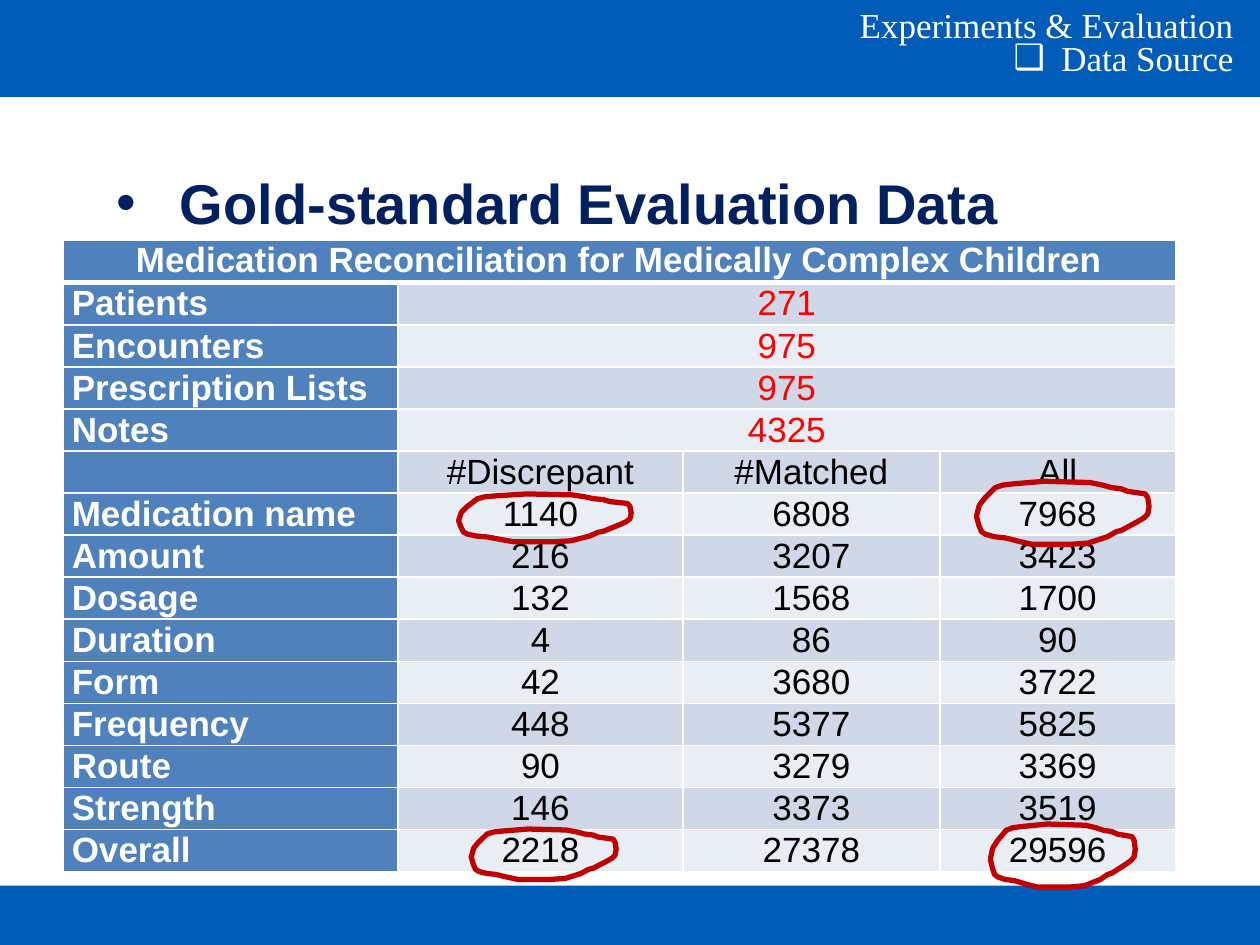
"""Build the slide on the gold-standard evaluation data."""
from lxml.etree import SubElement
from pptx import Presentation
from pptx.dml.color import RGBColor
from pptx.enum.shapes import MSO_SHAPE
from pptx.enum.text import MSO_ANCHOR, PP_ALIGN
from pptx.oxml.ns import qn
from pptx.util import Inches, Pt

BLUE = RGBColor(0x00, 0x5C, 0xB8)
NAVY = RGBColor(0x00, 0x20, 0x60)
STEEL = RGBColor(0x4F, 0x81, 0xBD)
BANDS = RGBColor(0xE9, 0xED, 0xF4), RGBColor(0xD0, 0xD8, 0xE8)
WHITE = RGBColor(0xFF, 0xFF, 0xFF)
BLACK = RGBColor(0x00, 0x00, 0x00)
RED = RGBColor(0xFF, 0x00, 0x00)
CRIMSON = RGBColor(0xC0, 0x00, 0x00)

TITLE = {"name": "Arial", "size": Pt(32), "bold": True}
HEAD = {"name": "Times New Roman", "size": Pt(20)}
LABEL = {"name": "Arial", "size": Pt(20), "bold": True}
VALUE = {"name": "Arial", "size": Pt(20), "bold": False}
INSETS = {"margin_left": Inches(0.07), "margin_right": Inches(0.07),
          "margin_top": 0, "margin_bottom": 0}

WIDTHS = 2.66, 2.26, 2.04, 1.87
ROWS = [
    ("Medication Reconciliation for Medically Complex Children",),
    ("Patients", "271"),
    ("Encounters", "975"),
    ("Prescription Lists", "975"),
    ("Notes", "4325"),
    ("", "#Discrepant", "#Matched", "All"),
    ("Medication name", "1140", "6808", "7968"),
    ("Amount", "216", "3207", "3423"),
    ("Dosage", "132", "1568", "1700"),
    ("Duration", "4", "86", "90"),
    ("Form", "42", "3680", "3722"),
    ("Frequency", "448", "5377", "5825"),
    ("Route", "90", "3279", "3369"),
    ("Strength", "146", "3373", "3519"),
    ("Overall", "2218", "27378", "29596"),
]

LOOP_SIZE = 137, 50
LOOP = [
    (11, 9), (15, 5), (21, 3), (30, 2), (54, 0), (90, 1), (100, 3), (107, 5),
    (115, 6), (120, 8), (134, 10), (136, 13), (137, 20), (136, 26), (133, 29),
    (128, 32), (115, 39), (111, 40), (104, 44), (89, 49), (75, 50), (44, 50),
    (35, 48), (23, 45), (14, 44), (7, 42), (4, 40), (2, 35), (0, 28), (2, 20),
    (3, 18), (7, 13),
]
MARKS = [(7.75, 3.82, 1.37, 0.5), (3.64, 3.92, 1.37, 0.38),
         (7.86, 6.54, 1.15, 0.5), (3.74, 6.58, 1.15, 0.4)]


def assign(item, values):
    """Set each named attribute of an item."""
    for name, value in values.items():
        setattr(item, name, value)


class Painter:
    """Hold the style and the slide being drawn."""

    def __init__(self, slide):
        """Keep the slide."""
        self.slide = slide
        self.shapes = slide.shapes

    def label(self, para, text, style, color, align=PP_ALIGN.LEFT):
        """Add one styled run to a paragraph."""
        para.alignment = align
        run = para.add_run()
        run.text = text
        assign(run.font, style)
        run.font.color.rgb = color

    def bullet(self, para, mark, indent):
        """Give a paragraph a hanging bullet."""
        props = para._p.get_or_add_pPr()
        props.set("marL", str(Inches(indent)))
        props.set("indent", str(-Inches(indent)))
        SubElement(props, qn("a:buFont"), typeface="Arial")
        SubElement(props, qn("a:buChar"), char=mark)

    def bar(self, top, height):
        """Draw a band across the slide."""
        bar = self.shapes.add_shape(
            MSO_SHAPE.RECTANGLE, 0, Inches(top), Inches(10), Inches(height))
        bar.shadow.inherit = False
        bar.fill.solid()
        bar.fill.fore_color.rgb = BLUE
        bar.line.fill.background()

    def text(self, box, lines, style, color, align, spacing, anchor):
        """Add a text box of (text, bullet, indent) lines."""
        frame = self.shapes.add_textbox(*map(Inches, box)).text_frame
        frame.word_wrap = True
        frame.vertical_anchor = anchor
        for index, (text, mark, indent) in enumerate(lines):
            para = frame.add_paragraph() if index else frame.paragraphs[0]
            if mark:
                self.bullet(para, mark, indent)
            para.line_spacing = spacing
            self.label(para, text, style, color, align)

    def border(self, cell, bottom):
        """Edge a cell in white."""
        props = cell._tc.get_or_add_tcPr()
        for side, width in zip("LRTB", (1, 1, 1, bottom)):
            line = SubElement(props, qn(f"a:ln{side}"), w=str(Pt(width)))
            fill = SubElement(line, qn("a:solidFill"))
            SubElement(fill, qn("a:srgbClr"), val=str(WHITE))

    def cell(self, cell, row, col):
        """Style one empty table cell."""
        assign(cell, INSETS)
        cell.vertical_anchor = MSO_ANCHOR.MIDDLE if row else MSO_ANCHOR.TOP
        self.border(cell, 1 if row else 3)
        cell.fill.solid()
        cell.fill.fore_color.rgb = BANDS[row % 2] if row and col else STEEL

    def table(self, box, widths, rows):
        """Add the table, merging short rows to its right edge."""
        count = len(widths)
        table = self.shapes.add_table(
            len(rows), count, *map(Inches, box)).table
        for column, width in zip(table.columns, widths):
            column.width = Inches(width)
        for row, texts in enumerate(rows):
            table.rows[row].height = Inches(box[3] / len(rows))
            for col in range(count):
                self.cell(table.cell(row, col), row, col)
            last = len(texts) - 1
            if last < count - 1:
                table.cell(row, last).merge(table.cell(row, count - 1))
            for col, text in enumerate(texts):
                para = table.cell(row, col).text_frame.paragraphs[0]
                if not text:
                    para.font.size = Pt(20)
                elif col:
                    color = BLACK if last > 1 else RED
                    self.label(para, text, VALUE, color, PP_ALIGN.CENTER)
                else:
                    align = PP_ALIGN.LEFT if row else PP_ALIGN.CENTER
                    self.label(para, text, LABEL, WHITE, align)

    def loop(self, left, top, width, height):
        """Draw a hand-made ring fitted to a box."""
        wide, high = LOOP_SIZE
        points = [(Inches(left + x * width / wide),
                   Inches(top + y * height / high)) for x, y in LOOP]
        pen = self.shapes.build_freeform(*points[0])
        pen.add_line_segments(points[1:], close=True)
        ring = pen.convert_to_shape()
        ring.shadow.inherit = False
        ring.fill.background()
        ring.line.color.rgb = CRIMSON
        ring.line.width = Pt(3)


def main():
    """Build and save the deck."""
    deck = Presentation()
    deck.slide_width, deck.slide_height = Inches(10), Inches(7.5)
    art = Painter(deck.slides.add_slide(deck.slide_layouts[6]))
    art.bar(0, 0.77)
    art.bar(7.03, 0.47)
    art.text((0.83, 1.22, 8.47, 0.77),
             [("Gold-standard Evaluation Data", "•", 0.5)],
             TITLE, NAVY, PP_ALIGN.LEFT, 1.0, MSO_ANCHOR.MIDDLE)
    art.text((6.66, 0.04, 3.23, 0.64),
             [("Experiments & Evaluation", "", 0), ("Data Source", "❑", 0.38)],
             HEAD, WHITE, PP_ALIGN.RIGHT, 0.8, MSO_ANCHOR.TOP)
    art.table((0.5, 1.91, 8.82, 5), WIDTHS, ROWS)
    for box in MARKS:
        art.loop(*box)
    deck.save("out.pptx")


if __name__ == "__main__":
    main()
